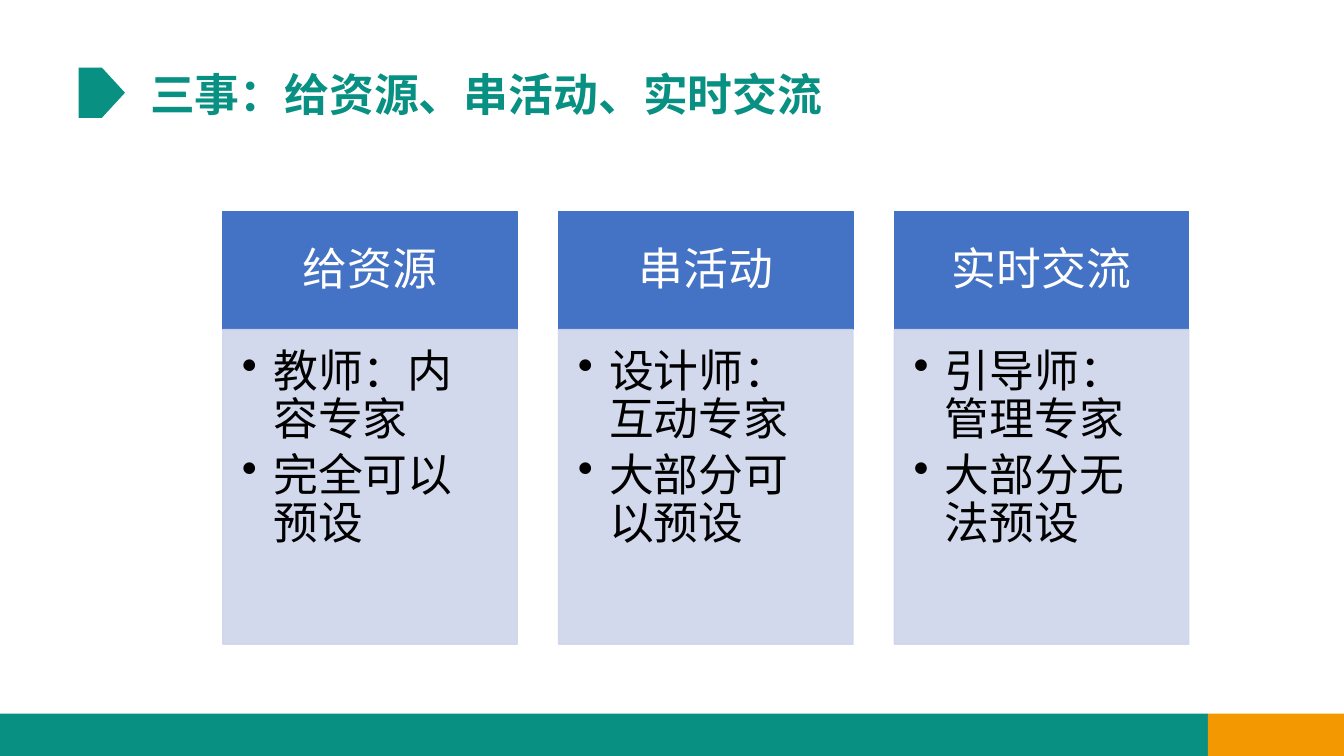
from lxml import etree
from pptx import Presentation
from pptx.dml.color import RGBColor
from pptx.enum.shapes import MSO_SHAPE
from pptx.enum.text import MSO_ANCHOR, PP_ALIGN
from pptx.oxml.ns import qn
from pptx.util import Inches, Pt

RECT, PENTAGON = MSO_SHAPE.RECTANGLE, MSO_SHAPE.PENTAGON
TOP, MIDDLE = MSO_ANCHOR.TOP, MSO_ANCHOR.MIDDLE
LEFT, CENTER = PP_ALIGN.LEFT, PP_ALIGN.CENTER

TEAL = RGBColor(0x08, 0x90, 0x82)
ORANGE = RGBColor(0xF3, 0x98, 0x00)
BLUE = RGBColor(0x44, 0x72, 0xC4)
PALE = RGBColor(0xCF, 0xD5, 0xEA)
WHITE = RGBColor(0xFF, 0xFF, 0xFF)
BLACK = RGBColor(0x00, 0x00, 0x00)
FONT = "Noto Sans CJK SC"

COLUMNS = [
    ("给资源", ["教师：内容专家", "完全可以预设"]),
    ("串活动", ["设计师：互动专家", "大部分可以预设"]),
    ("实时交流", ["引导师：管理专家", "大部分无法预设"]),
]
COLUMN_LEFT, COLUMN_STEP, COLUMN_WIDTH = 2.21, 3.33, 2.92
HEAD_TOP, HEAD_HEIGHT, BODY_HEIGHT = 2.1, 1.17, 3.12


def add_block(slide, preset, box, color, outlined=False):
    s = slide.shapes.add_shape(preset, *map(Inches, box))
    s.shadow.inherit = False
    s.fill.solid()
    s.fill.fore_color.rgb = color
    if outlined:
        s.line.color.rgb = color
        s.line.width = Pt(1)
    else:
        s.line.fill.background()
    return s


def set_opacity(s, percent):
    """Apply the same opacity to the fill and the outline."""
    for clr in s._element.spPr.iter(qn("a:srgbClr")):
        etree.SubElement(clr, qn("a:alpha")).set("val", str(percent * 1000))


def set_frame(s, insets, anchor):
    """Wrap the text and set left, top, right and bottom insets."""
    tf = s.text_frame
    tf.word_wrap = True
    tf.vertical_anchor = anchor
    (tf.margin_left, tf.margin_top,
     tf.margin_right, tf.margin_bottom) = map(Inches, insets)
    return tf


def write(tf, lines, color, align=LEFT, bold=False):
    tf.text = "\n".join(lines)
    for p in tf.paragraphs:
        p.alignment = align
        p.line_spacing = 0.9
        p.font.name = FONT
        p.font.size = Pt(32)
        p.font.bold = bold
        p.font.color.rgb = color
        props = p._p.pPr.find(qn("a:defRPr"))
        etree.SubElement(props, qn("a:ea")).set("typeface", FONT)


def add_bullets(tf):
    for p in tf.paragraphs:
        p.space_after = Pt(4.8)
        pPr = p._p.pPr
        pPr.set("marL", str(Inches(0.31)))
        pPr.set("indent", str(-Inches(0.31)))
        bullet = etree.Element(qn("a:buChar"), char="•")
        pPr.find(qn("a:defRPr")).addprevious(bullet)


def add_title(slide, text):
    box = slide.shapes.add_textbox(*map(Inches, (1.39, 0.67, 9.97, 0.58)))
    tf = set_frame(box, (0.1, 0.05, 0.1, 0.05), TOP)
    write(tf, [text], TEAL, bold=True)


def add_column(slide, left, heading, points):
    head = add_block(slide, RECT, (left, HEAD_TOP, COLUMN_WIDTH, HEAD_HEIGHT),
                     BLUE, outlined=True)
    tf = set_frame(head, (0.25, 0.14, 0.25, 0.14), MIDDLE)
    write(tf, [heading], WHITE, CENTER)

    body_top = HEAD_TOP + HEAD_HEIGHT
    body = add_block(slide, RECT, (left, body_top, COLUMN_WIDTH, BODY_HEIGHT),
                     PALE, outlined=True)
    set_opacity(body, 90)
    tf = set_frame(body, (0.19, 0.19, 0.25, 0.28), TOP)
    write(tf, points, BLACK)
    add_bullets(tf)


def main():
    prs = Presentation()
    prs.slide_width, prs.slide_height = Inches(13.33), Inches(7.5)
    slide = prs.slides.add_slide(prs.slide_layouts[6])

    add_block(slide, PENTAGON, (0.78, 0.67, 0.46, 0.5), TEAL)
    add_block(slide, RECT, (0, 7.08, 11.98, 0.42), TEAL)
    add_block(slide, RECT, (11.98, 7.08, 1.35, 0.42), ORANGE)
    add_title(slide, "三事：给资源、串活动、实时交流")
    for i, (heading, points) in enumerate(COLUMNS):
        add_column(slide, COLUMN_LEFT + i * COLUMN_STEP, heading, points)

    prs.save("out.pptx")


if __name__ == "__main__":
    main()
